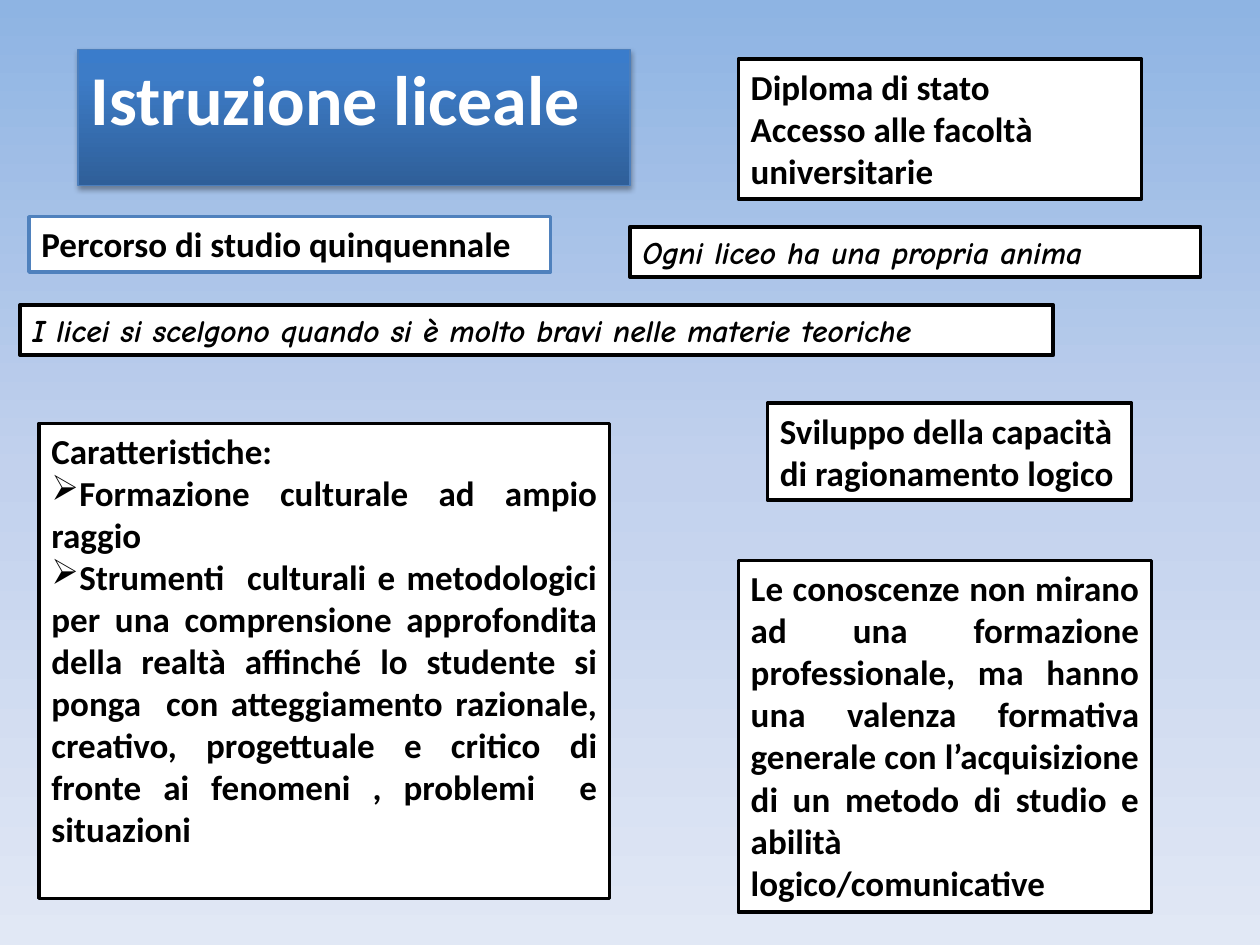
from lxml import etree
from pptx import Presentation
from pptx.dml.color import RGBColor
from pptx.enum.shapes import MSO_SHAPE
from pptx.enum.text import MSO_ANCHOR, PP_ALIGN
from pptx.oxml.ns import qn
from pptx.util import Inches, Pt

RECT = MSO_SHAPE.RECTANGLE
TOP, MIDDLE = MSO_ANCHOR.TOP, MSO_ANCHOR.MIDDLE
LEFT, JUSTIFY = PP_ALIGN.LEFT, PP_ALIGN.JUSTIFY
BLACK = RGBColor(0x00, 0x00, 0x00)
WHITE = RGBColor(0xFF, 0xFF, 0xFF)
BLUE = RGBColor(0x4F, 0x81, 0xBD)
TITLE_EDGE = RGBColor(0x4B, 0x7E, 0xBC)
SKY = [(0, RGBColor(0x8E, 0xB4, 0xE3)), (50, RGBColor(0xC2, 0xD1, 0xED)),
       (100, RGBColor(0xE1, 0xE8, 0xF5))]
TITLE_BLUES = [(0, RGBColor(0x2F, 0x5F, 0x99)), (80, RGBColor(0x3D, 0x7C, 0xC7)),
               (100, RGBColor(0x3A, 0x7C, 0xCB))]
COLS, ROWS = 100, 75
BODY, HAND = "Calibri", "Comic Neue"
BULLET = "➢"


def add_node(parent, tag, **attrs):
    """Append a DrawingML child with the given attributes."""
    return etree.SubElement(parent, qn(tag), {k: str(v) for k, v in attrs.items()})


def set_gradient(fill, element, stops, angle):
    """Fill with a linear gradient, its angle counted counter-clockwise."""
    fill.gradient()
    fill.gradient_angle = angle
    stop_list = next(element.iter(qn("a:gsLst")))
    for stop in list(stop_list):
        stop_list.remove(stop)
    for share, color in stops:
        stop = add_node(stop_list, "a:gs", pos=share * 1000)
        add_node(stop, "a:srgbClr", val=color)


def add_shadow(sp):
    """Cast a soft shadow straight down."""
    effects = next(sp.element.iter(qn("a:effectLst")))
    shadow = add_node(effects, "a:outerShdw", blurRad=Pt(3.1), dist=Pt(1.8),
                      dir=90 * 60000, rotWithShape=0)
    color = add_node(shadow, "a:srgbClr", val=BLACK)
    add_node(color, "a:alpha", val=35000)


def add_paragraph(p, text, size, font, color, italic, align):
    """Write one bold paragraph, bulleted if it starts with the bullet sign."""
    p.alignment = align
    if text.startswith(BULLET):
        add_node(p._p.get_or_add_pPr(), "a:buChar", char=BULLET)
    r = p.add_run()
    r.text = text.removeprefix(BULLET)
    r.font.size, r.font.name = Pt(size), font
    r.font.bold, r.font.italic = True, italic
    r.font.color.rgb = color


def add_box(prs, s, cell, lines, size=20, font=BODY, color=BLACK, italic=False,
            align=LEFT, edge=BLACK, weight=2, anchor=TOP):
    """Add a white framed box at (column, row, columns, rows)."""
    col, row = prs.slide_width / COLS, prs.slide_height / ROWS
    x, y, w, h = cell
    sp = s.shapes.add_shape(RECT, int(x * col), int(y * row), int(w * col), int(h * row))
    sp.shadow.inherit = False
    sp.fill.solid()
    sp.fill.fore_color.rgb = WHITE
    sp.line.color.rgb, sp.line.width = edge, Pt(weight)
    tf = sp.text_frame
    tf.word_wrap, tf.vertical_anchor = True, anchor
    for i, text in enumerate(lines):
        p = tf.add_paragraph() if i else tf.paragraphs[0]
        add_paragraph(p, text, size, font, color, italic, align)
    return sp


def add_title(prs, s, cell, text):
    """Add the shaded blue title box."""
    sp = add_box(prs, s, cell, [text], size=40, color=WHITE, edge=TITLE_EDGE, weight=0.75)
    set_gradient(sp.fill, sp.element, TITLE_BLUES, 90)
    add_shadow(sp)


def add_motto(prs, s, cell, text):
    """Add a one-line box in handwriting style."""
    add_box(prs, s, cell, [text], size=18, font=HAND, italic=True, anchor=MIDDLE)


def main():
    """Build the slide on the liceo school path."""
    prs = Presentation()
    prs.slide_width, prs.slide_height = Inches(10), Inches(7.5)
    s = prs.slides.add_slide(prs.slide_layouts[6])
    set_gradient(s.background.fill, s.element, SKY, 270)

    add_title(prs, s, (6.2, 3.9, 43.8, 10.8), "Istruzione liceale")
    add_box(prs, s, (2.3, 17.2, 41.4, 4.4), ["Percorso di studio quinquennale"], edge=BLUE)
    add_box(prs, s, (58.6, 4.7, 32, 11.1),
            ["Diploma di stato", "Accesso alle facoltà universitarie"])
    add_box(prs, s, (3.1, 33.6, 45.3, 37.7), [
        "Caratteristiche:",
        BULLET + "Formazione culturale ad ampio raggio",
        BULLET + "Strumenti  culturali e metodologici per una comprensione approfondita "
        "della realtà affinché lo studente si ponga  con atteggiamento razionale, "
        "creativo, progettuale e critico di fronte ai fenomeni , problemi  e situazioni",
    ], align=JUSTIFY)
    add_box(prs, s, (60.9, 32, 28.9, 7.7),
            ["Sviluppo della capacità di ragionamento logico"])
    add_motto(prs, s, (1.6, 24.2, 82, 4),
              "I licei si scelgono quando si è molto bravi nelle materie teoriche")
    add_motto(prs, s, (50, 18, 45.3, 4), "Ogni liceo ha una propria anima")
    add_box(prs, s, (58.6, 44.5, 32.8, 27.9), [
        "Le conoscenze non mirano ad una formazione professionale, ma hanno una valenza "
        "formativa generale con l’acquisizione di un metodo di studio e abilità "
        "logico/comunicative",
    ], align=JUSTIFY)
    prs.save("out.pptx")


if __name__ == "__main__":
    main()
